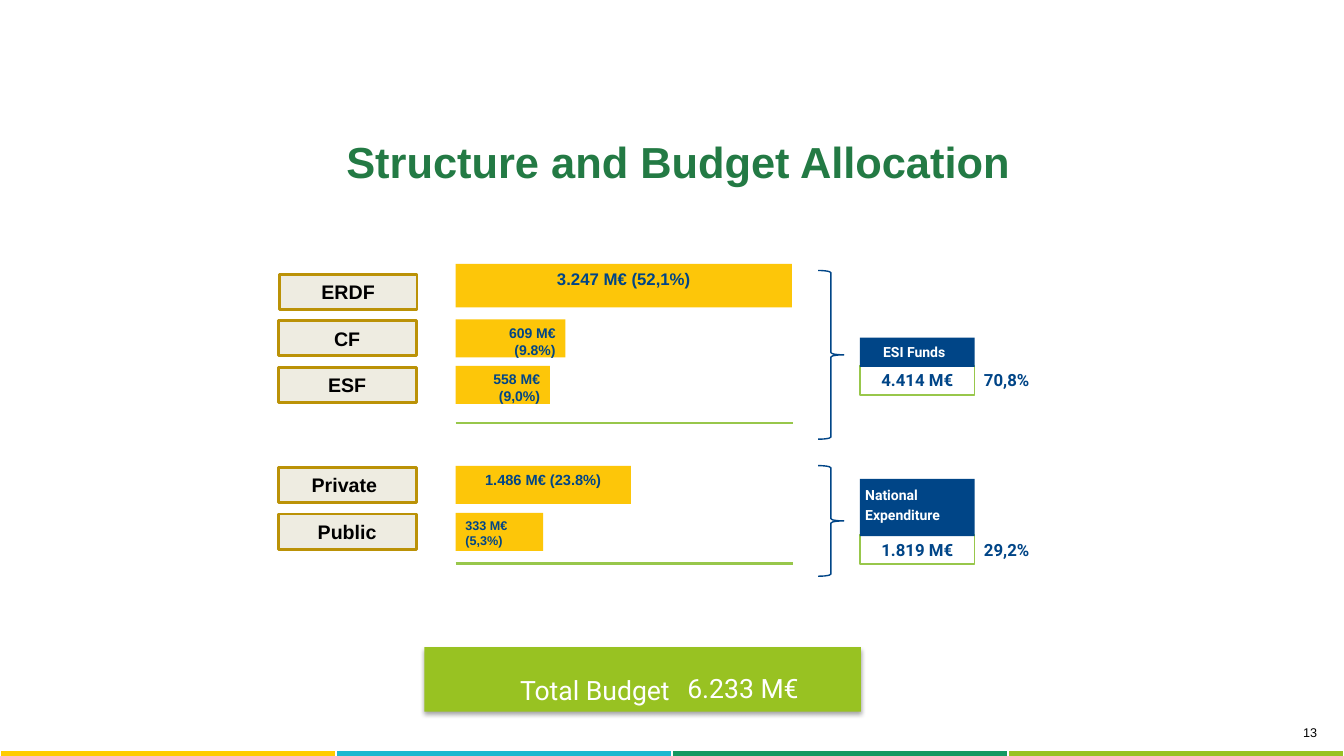
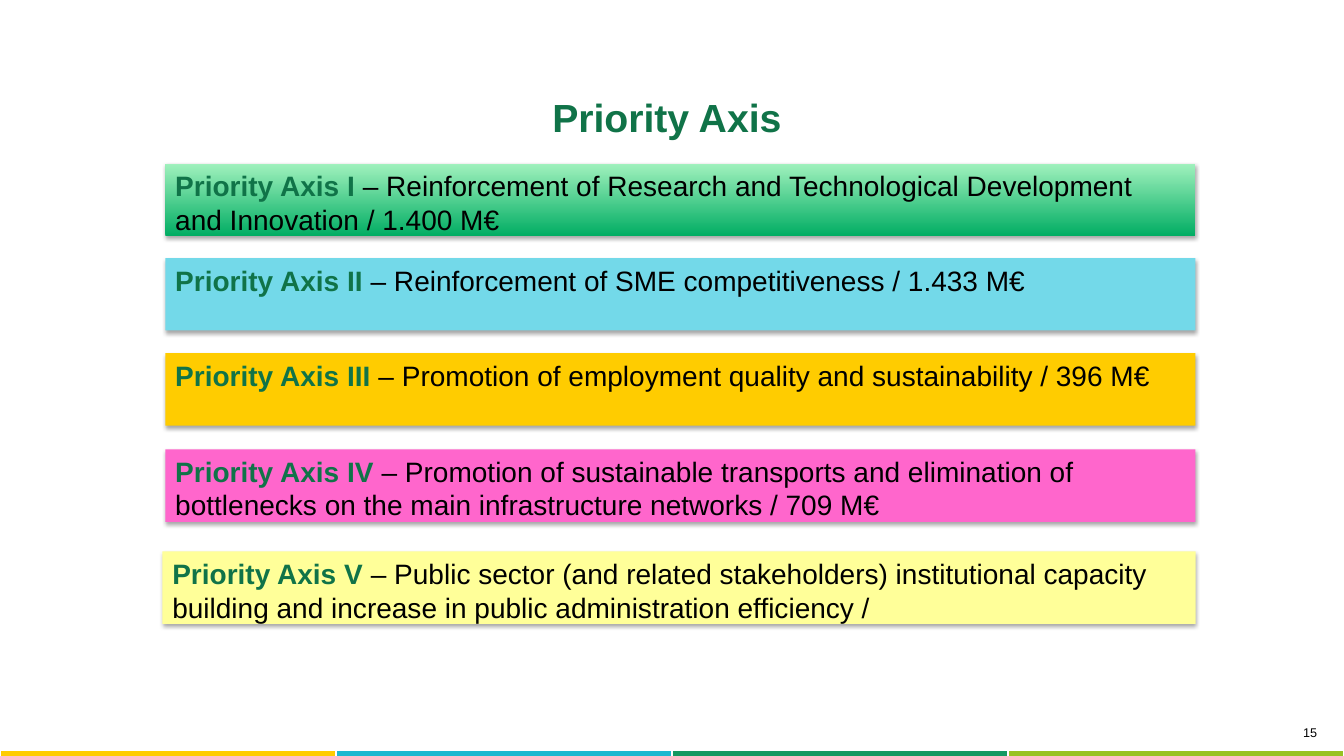
from lxml import etree
from pptx import Presentation
from pptx.dml.color import RGBColor
from pptx.enum import shapes, text
from pptx.oxml import ns
from pptx.util import Pt

WHITE = RGBColor(0xFF, 0xFF, 0xFF)
BLACK = RGBColor(0, 0, 0)
NAVY = RGBColor(0x00, 0x45, 0x87)
LIME = RGBColor(0x98, 0xC2, 0x22)
RULE_GREEN = RGBColor(0x98, 0xC7, 0x4B)
TITLE_GREEN = RGBColor(0x23, 0x7A, 0x44)
AXIS_GREEN = RGBColor(0x10, 0x73, 0x48)
EMERALD = RGBColor(0x01, 0xAD, 0x63)
MINT = RGBColor(0xA0, 0xF1, 0xBD)
AMBER = RGBColor(0xFD, 0xC6, 0x09)
GOLD = RGBColor(0xFF, 0xCC, 0x00)
OCHRE = RGBColor(0xBB, 0x92, 0x07)
CREAM = RGBColor(0xEE, 0xEC, 0xE1)
SKY = RGBColor(0x73, 0xD9, 0xE9)
PINK = RGBColor(0xFF, 0x66, 0xCC)
YELLOW = RGBColor(0xFF, 0xFF, 0x99)
STRIPE = (GOLD, RGBColor(0x1C, 0xB8, 0xCF), RGBColor(0x15, 0x99, 0x61), LIME)

LEFT, CENTER, RIGHT = text.PP_ALIGN.LEFT, text.PP_ALIGN.CENTER, text.PP_ALIGN.RIGHT
TOP, MIDDLE = text.MSO_ANCHOR.TOP, text.MSO_ANCHOR.MIDDLE
INSETS = (7.2, 3.6)
WIDTH, HEIGHT = 960, 540


class Deck:
    def __init__(self):
        self.prs = Presentation()
        self.prs.slide_width, self.prs.slide_height = Pt(WIDTH), Pt(HEIGHT)
        self.s = None

    def slide(self, number):
        self.s = self.prs.slides.add_slide(self.prs.slide_layouts[6])
        self.stripe()
        self.label(760, 514, 188, 22, str(number), 9, BLACK, align=RIGHT)

    def stripe(self):
        frame = self.s.shapes.add_table(1, len(STRIPE), 0, Pt(535.7), Pt(WIDTH), Pt(4.3))
        for cell, colour in zip(frame.table.rows[0].cells, STRIPE):
            cell.margin_top = cell.margin_bottom = 0
            cell.fill.solid()
            cell.fill.fore_color.rgb = colour

    def put_text(self, sp, words, size, colour, font="Arial", bold=False, align=LEFT,
                 anchor=TOP, insets=INSETS, wrap=True, gap=0):
        tf = sp.text_frame
        tf.text = words
        tf.word_wrap = wrap
        tf.vertical_anchor = anchor
        tf.margin_left = tf.margin_right = Pt(insets[0])
        tf.margin_top = tf.margin_bottom = Pt(insets[1])
        for p in tf.paragraphs:
            p.alignment = align
            p.space_after = Pt(gap)
            for r in p.runs:
                self.style(r, size, colour, font, bold)

    def style(self, r, size, colour, font="Arial", bold=False):
        r.font.name, r.font.size, r.font.bold = font, Pt(size), bold
        r.font.color.rgb = colour

    def label(self, x, y, w, h, words, size, colour, **look):
        sp = self.s.shapes.add_textbox(Pt(x), Pt(y), Pt(w), Pt(h))
        self.put_text(sp, words, size, colour, **look)

    def title(self, x, y, w, words, size, colour):
        self.label(x, y, w, 42, words, size, colour, bold=True)

    def box(self, x, y, w, h, fill=None, line=None, weight=1,
            kind=shapes.MSO_SHAPE.RECTANGLE, shadow=False):
        sp = self.s.shapes.add_shape(kind, Pt(x), Pt(y), Pt(w), Pt(h))
        if fill is None:
            sp.fill.background()
        else:
            sp.fill.solid()
            sp.fill.fore_color.rgb = fill
        if line is None:
            sp.line.fill.background()
        else:
            sp.line.color.rgb = line
            sp.line.width = Pt(weight)
        sp.shadow.inherit = False
        if shadow:
            self.drop_shadow(sp)
        return sp

    def drop_shadow(self, sp):
        effects = sp._element.spPr.find(ns.qn("a:effectLst"))
        outer = etree.SubElement(effects, ns.qn("a:outerShdw"), blurRad=str(Pt(3.1)),
                                 dist=str(Pt(1.8)), dir="5400000", rotWithShape="0")
        colour = etree.SubElement(outer, ns.qn("a:srgbClr"), val="000000")
        etree.SubElement(colour, ns.qn("a:alpha"), val="35000")

    def rule(self, x, y, w):
        cn = self.s.shapes.add_connector(shapes.MSO_CONNECTOR.STRAIGHT,
                                         Pt(x), Pt(y), Pt(x + w), Pt(y))
        cn.line.color.rgb = RULE_GREEN
        cn.line.width = Pt(1.5)
        etree.SubElement(cn._element.spPr, ns.qn("a:effectLst"))

    def tag(self, x, y, words):
        sp = self.box(x, y, 98.6, 25.2, CREAM, OCHRE, 2)
        self.put_text(sp, words, 14, BLACK, bold=True, align=CENTER, anchor=MIDDLE)

    def bar(self, y, w, h, words, size, align):
        sp = self.box(325.4, y, w, h, AMBER)
        self.put_text(sp, words, size, NAVY, bold=True, align=align)

    def brace(self, y, h):
        self.box(584.4, y, 18.3, h, line=NAVY, kind=shapes.MSO_SHAPE.RIGHT_BRACE)

    def subtotal(self, y, h, heading, insets, amount, share):
        x, w, bottom = 614.2, 82, y + h
        roboto = dict(font="Roboto", bold=True)
        frame = self.box(x, bottom - 1, w, 21, WHITE, RULE_GREEN)
        self.put_text(frame, amount, 12, NAVY, align=CENTER, anchor=MIDDLE,
                      insets=(0, 0), **roboto)
        head = self.box(x, y, w, h, NAVY)
        self.put_text(head, heading, 10, WHITE, insets=insets, gap=2, **roboto)
        self.label(695.8, bottom - 1.2, 52.6, 21.6, share, 12, NAVY, **roboto)

    def axis(self, x, y, w, fill, lead, words):
        sp = self.box(x, y, w, 51.8, fill, shadow=True)
        self.put_text(sp, lead, 20, AXIS_GREEN, bold=True)
        r = sp.text_frame.paragraphs[0].add_run()
        r.text = words
        self.style(r, 20, BLACK)
        return sp


def budget(deck):
    deck.slide(13)
    deck.title(240.3, 93, 500, "Structure and Budget Allocation", 31, TITLE_GREEN)
    for tag_x, tag_y, name, *bar in (
        (199.4, 195.8, "ERDF", 188.6, 240.3, 31, "3.247 M€ (52,1%)", 12, CENTER),
        (198.7, 229, "CF", 228.2, 78.5, 27.2, "609 M€ (9.8%)", 10, RIGHT),
        (198.7, 262.3, "ESF", 261.4, 67.4, 27.2, "558 M€ (9,0%)", 10, RIGHT),
        (198.7, 333.8, "Private ", 332.8, 125.2, 27.2, "1.486 M€ (23.8%)", 10.5, CENTER),
        (198.7, 367.2, "Public", 366.4, 62.6, 27.2, "333 M€ (5,3%)", 9, LEFT),
    ):
        deck.tag(tag_x, tag_y, name)
        deck.bar(*bar)
    for y in (302, 402.5):
        deck.rule(325.4, y, 241.4)
    deck.brace(193.2, 120.5)
    deck.brace(332.6, 79)
    deck.subtotal(241.2, 20.9, "ESI Funds", (16.6, 4.3), "4.414 M€", "70,8%")
    deck.subtotal(342, 41, "National\nExpenditure", (3.8, 5.8), "1.819 M€", "29,2%")
    deck.box(303.1, 462.2, 311.8, 46.1, LIME, shadow=True)
    for x, y, w, words in ((371.5, 481.7, 110.2, "Total Budget"),
                           (491, 480.2, 82.8, "6.233 M€")):
        deck.label(x, y, w, 23, words, 19, WHITE, font="Roboto", insets=(0, 0), wrap=False)


def priorities(deck):
    deck.slide(15)
    deck.title(387.4, 63.4, 198.7, "Priority Axis", 28, AXIS_GREEN)
    x, w = 118.1, 735.8
    first = deck.axis(x, 116.9, w, EMERALD, "Priority Axis I ",
                      "– Reinforcement of Research and Technological Development "
                      "and Innovation / 1.400 M€")
    first.fill.gradient()
    first.fill.gradient_angle = 90
    for stop, colour in zip(first.fill.gradient_stops, (EMERALD, MINT)):
        stop.color.rgb = colour
    deck.axis(x, 184.3, w, SKY, "Priority Axis II ",
              "– Reinforcement of SME competitiveness / 1.433 M€")
    deck.axis(x, 252.3, w, GOLD, "Priority Axis III ",
              "– Promotion of employment quality and sustainability / 396 M€")
    deck.axis(x, 321, w, PINK, "Priority Axis IV ",
              "– Promotion of sustainable transports and elimination of "
              "bottlenecks on the main infrastructure networks / 709 M€")
    deck.axis(116, 393.9, 738, YELLOW, "Priority Axis V ",
              "– Public sector (and related stakeholders) institutional capacity "
              "building and increase in public administration efficiency /")


def main():
    deck = Deck()
    budget(deck)
    priorities(deck)
    deck.prs.save("out.pptx")


if __name__ == "__main__":
    main()
